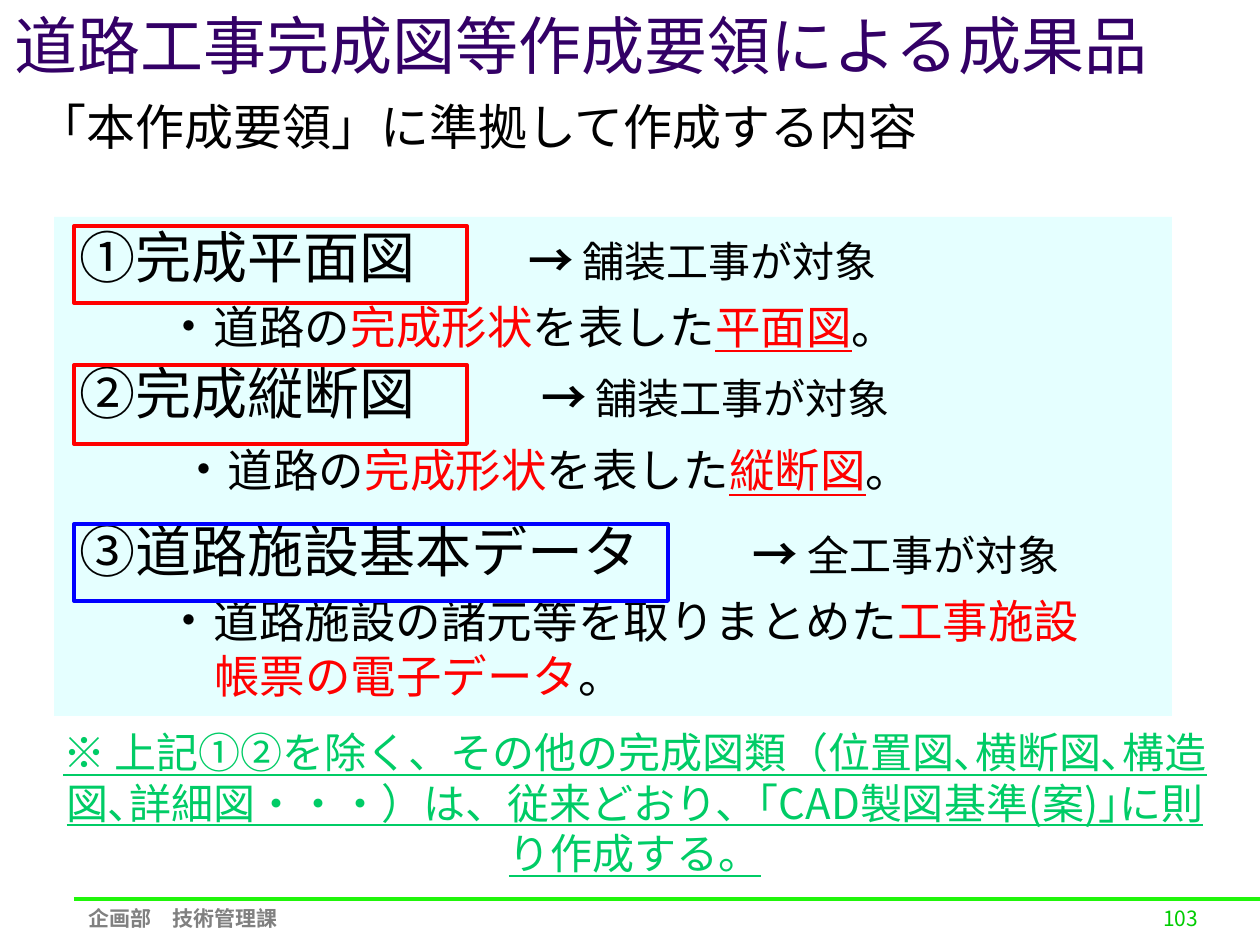
from dataclasses import dataclass
from typing import Any

from lxml import etree
from pptx import Presentation
from pptx.dml.color import RGBColor
from pptx.enum.shapes import MSO_CONNECTOR, MSO_SHAPE
from pptx.enum.text import MSO_ANCHOR, MSO_AUTO_SIZE, PP_ALIGN
from pptx.oxml.ns import qn
from pptx.util import Emu, Pt

RECT = MSO_SHAPE.RECTANGLE
STRAIGHT = MSO_CONNECTOR.STRAIGHT
LEFT, CENTER = PP_ALIGN.LEFT, PP_ALIGN.CENTER
TOP, MIDDLE = MSO_ANCHOR.TOP, MSO_ANCHOR.MIDDLE
NO_FIT = MSO_AUTO_SIZE.NONE
EMU_PER_PX = 914400 / 126
FONT = "Noto Sans CJK JP"
BLACK, RED, BLUE = "000000", "FF0000", "0000FF"


@dataclass
class Span:
    text: str
    size: int
    color: str = BLACK
    bold: bool = False
    underline: bool = False
    font: str = FONT


@dataclass
class Line:
    spans: list[Span]
    height: int | None = None
    before: int = 0
    left: int = 0
    indent: int = 0
    align: Any = LEFT


@dataclass
class Box:
    x: int
    y: int
    w: int
    h: int


@dataclass
class Frame:
    box: Box
    color: str


@dataclass
class Label:
    box: Box
    line: Line
    top: int = 6
    anchor: Any = TOP
    wrap: bool = True


def px(n: int) -> Emu:
    return Emu(round(n * EMU_PER_PX))


def rgb(value: str) -> RGBColor:
    return RGBColor.from_string(value)


def place(sp, box: Box) -> None:
    for name, n in {"left": box.x, "top": box.y, "width": box.w, "height": box.h}.items():
        setattr(sp, name, px(n))


def add_span(p, span: Span) -> None:
    r = p.add_run()
    r.text = span.text
    formats = {"name": span.font, "size": Pt(span.size), "bold": span.bold, "underline": span.underline}
    for name, value in formats.items():
        setattr(r.font, name, value)
    r.font.color.rgb = rgb(span.color)
    etree.SubElement(r.font._element, qn("a:ea"), typeface=span.font)


def fill_line(p, line: Line) -> None:
    p.alignment = line.align
    p.space_before = Pt(line.before)
    if line.height:
        p.line_spacing = Pt(line.height)
    pPr = p._p.get_or_add_pPr()
    pPr.set("marL", str(px(line.left)))
    pPr.set("indent", str(px(line.indent)))
    etree.SubElement(pPr, qn("a:buNone"))
    for span in line.spans:
        add_span(p, span)


def fill_text(sp, lines: list[Line], top: int = 6, side: int = 13,
              anchor: Any = TOP, wrap: bool = True) -> None:
    tf = sp.text_frame
    formats = {"auto_size": NO_FIT, "word_wrap": wrap, "vertical_anchor": anchor,
               "margin_left": px(side), "margin_right": px(side),
               "margin_top": px(top), "margin_bottom": px(min(top, 6))}
    for name, value in formats.items():
        setattr(tf, name, value)
    for i, line in enumerate(lines):
        fill_line(tf.add_paragraph() if i else tf.paragraphs[0], line)


def add_label(s, label: Label) -> None:
    sp = s.shapes.add_textbox(0, 0, 0, 0)
    place(sp, label.box)
    fill_text(sp, [label.line], label.top, anchor=label.anchor, wrap=label.wrap)


def add_frame(s, frame: Frame) -> None:
    sp = s.shapes.add_shape(RECT, 0, 0, 0, 0)
    place(sp, frame.box)
    sp.shadow.inherit = False
    sp.fill.background()
    sp.line.color.rgb = rgb(frame.color)
    sp.line.width = Pt(2.25)


def add_rule(s, x1: int, x2: int, y: int, color: str) -> None:
    sp = s.shapes.add_connector(STRAIGHT, px(x1), px(y), px(x2), px(y))
    sp.line.color.rgb = rgb(color)
    sp.line.width = Pt(2.25)
    etree.SubElement(sp._element.spPr, qn("a:effectLst"))


def heading(name: str, before: int = 0) -> Line:
    return Line([Span(name, 32)], 38, before, indent=12)


def target(text: str, x: int, y: int) -> Label:
    spans = [Span("→", 26, bold=True), Span(" " + text, 24)]
    return Label(Box(x, y, 400, 80), Line(spans, 38))


def detail(spans: list[Span], before: int = 4, left: int = 147) -> Line:
    return Line([Span("・", 28), *spans], 33, before, left, -49)


def drawing(name: str) -> list[Span]:
    return [Span("道路の", 26), Span("完成形状", 26, RED), Span("を表した", 26),
            Span(name, 26, RED, underline=True), Span("。", 26)]


TITLE = Line([Span("道路工事完成図等作成要領による成果品", 36, "330066")])
CONTENTS = [
    heading("①完成平面図"),
    detail(drawing("平面図")),
    heading("②完成縦断図", 3),
    detail(drawing("縦断図"), 8, 161),
    heading("③道路施設基本データ", 11),
    detail([Span("道路施設の諸元等を取りまとめた", 26), Span("工事施設", 26, RED)]),
    Line([Span("帳票の電子データ", 26, RED), Span("。", 26)], 31, left=147),
]
FRAMES = [
    Frame(Box(74, 365, 393, 79), RED),
    Frame(Box(74, 524, 594, 77), BLUE),
    Frame(Box(74, 226, 393, 77), RED),
]
NOTE = ("※ 上記①②を除く、その他の完成図類（位置図､横断図､構造図､詳細図・・・）は、"
        "従来どおり、｢CAD製図基準(案)｣に則り作成する。")
LABELS = [
    target("舗装工事が対象", 515, 214),
    target("舗装工事が対象", 528, 351),
    target("全工事が対象", 740, 508),
    Label(Box(1150, 900, 110, 45), Line([Span("103", 12, "00CC00")])),
    Label(Box(49, 905, 268, 26),
          Line([Span("企画部　技術管理課", 12, "808080", True, font="Arial")], align=CENTER),
          anchor=MIDDLE, wrap=False),
    Label(Box(43, 721, 1184, 165),
          Line([Span(NOTE, 24, "00CC66", underline=True)], 29, align=CENTER), top=5),
    Label(Box(25, 89, 1155, 72),
          Line([Span("「本作成要領」に準拠して作成する内容", 28)], 34), top=7),
]


def main() -> None:
    prs = Presentation()
    prs.slide_width, prs.slide_height = px(1260), px(945)
    s = prs.slides.add_slide(prs.slide_layouts[1])
    title, body = s.placeholders
    place(title, Box(15, 0, 1191, 89))
    fill_text(title, [TITLE], top=0, side=0, anchor=MIDDLE)
    place(body, Box(54, 217, 1118, 499))
    body.fill.solid()
    body.fill.fore_color.rgb = rgb("CCFFFF")
    color = body._element.spPr.find(".//" + qn("a:srgbClr"))
    etree.SubElement(color, qn("a:alpha"), val="50000")
    fill_text(body, CONTENTS)
    for frame in FRAMES:
        add_frame(s, frame)
    add_rule(s, 74, 1260, 899, "20F60A")
    for label in LABELS:
        add_label(s, label)
    prs.save("out.pptx")


if __name__ == "__main__":
    main()
